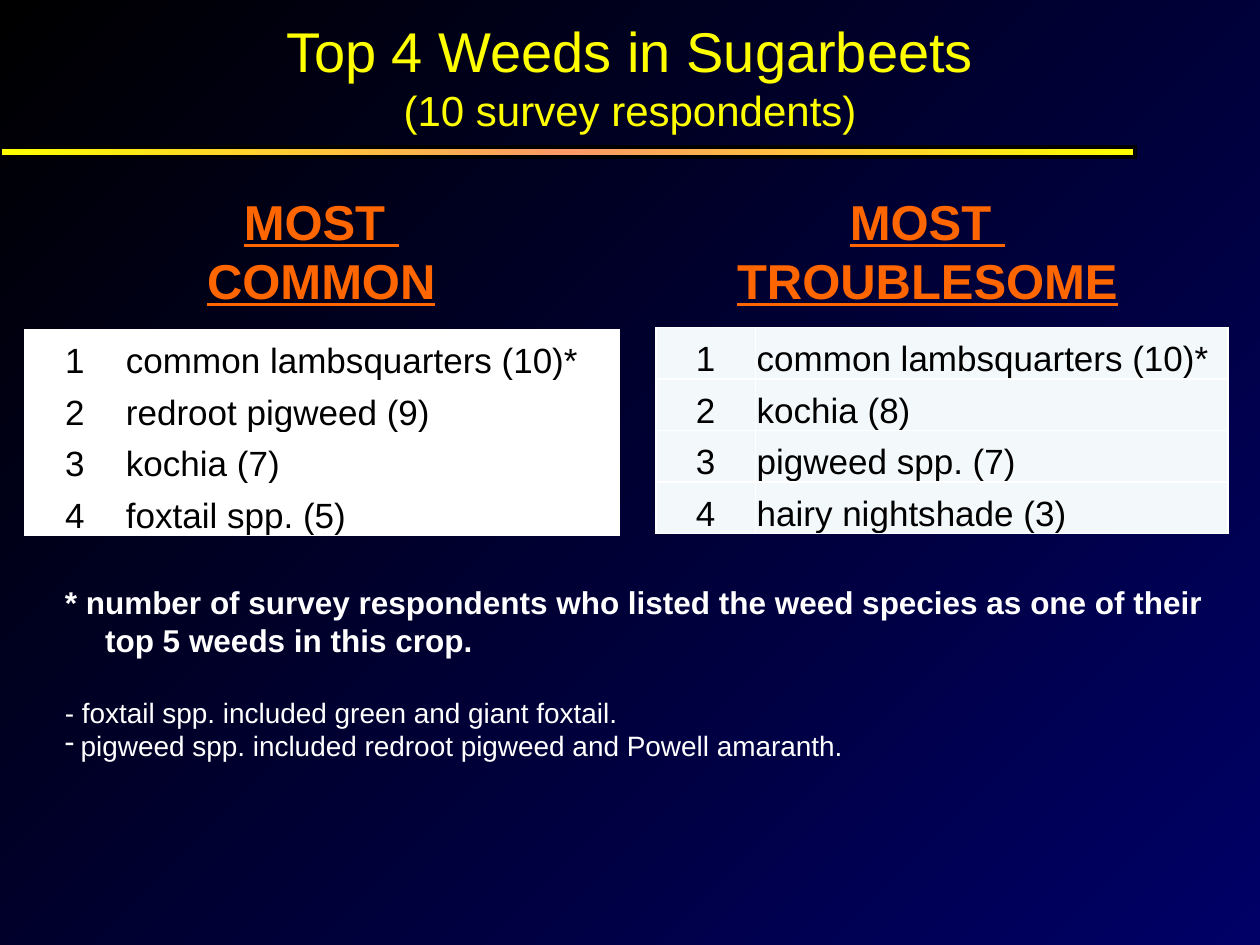
import copy
from dataclasses import dataclass

import pptx
import pptx.dml.color
import pptx.enum.shapes
import pptx.enum.text
import pptx.oxml
import pptx.oxml.ns
import pptx.util

Pt = pptx.util.Pt
RGB = pptx.dml.color.RGBColor.from_string
ALIGN = pptx.enum.text.PP_ALIGN
ANCHOR = pptx.enum.text.MSO_ANCHOR
AUTO_SIZE = pptx.enum.text.MSO_AUTO_SIZE


@dataclass(frozen=True)
class Theme:
    font: str = "Arial"
    black: str = "000000"
    navy: str = "000066"
    yellow: str = "FFFF00"
    peach: str = "FF9966"
    orange: str = "FF6600"
    white: str = "FFFFFF"
    pale: str = "F3F9FA"
    title: int = 32
    heading: int = 28
    subtitle: int = 24
    table: int = 20
    note: int = 18
    detail: int = 16


def set_values(target, values):
    for name, value in values.items():
        setattr(target, name, value)


class SlideBuilder:
    def __init__(self, slide, theme):
        self.slide = slide
        self.theme = theme

    def gradient(self, fill, colors, angle):
        """Spread the colours evenly; the angle runs counter-clockwise."""
        fill.gradient()
        fill.gradient_angle = angle
        first = fill.gradient_stops[0]._gs
        for _ in colors[2:]:
            first.addnext(copy.deepcopy(first))
        for index, (stop, color) in enumerate(zip(fill.gradient_stops, colors)):
            stop.color.rgb = RGB(color)
            stop.position = index / (len(colors) - 1)

    def background(self, colors, angle):
        self.gradient(self.slide.background.fill, colors, angle)

    def rule(self, left, top, width, height, colors):
        shape = self.slide.shapes.add_shape(
            pptx.enum.shapes.MSO_SHAPE.RECTANGLE,
            Pt(left), Pt(top), Pt(width), Pt(height))
        shape.shadow.inherit = False
        self.gradient(shape.fill, colors, 0)
        shape.line.color.rgb = RGB(self.theme.black)
        shape.line.width = Pt(2.25)

    def add_text(self, paragraph, text, color, size, align=ALIGN.LEFT, **font):
        paragraph.alignment = align
        run = paragraph.add_run()
        run.text = text
        set_values(run.font, {"name": self.theme.font, "size": Pt(size), **font})
        run.font.color.rgb = RGB(color)

    def hang(self, paragraph, indent, bullet=None):
        """Set a hanging indent, with an optional bullet character."""
        properties = paragraph._p.get_or_add_pPr()
        properties.set("marL", str(Pt(indent)))
        properties.set("indent", str(-Pt(indent)))
        if bullet:
            element = pptx.oxml.parse_xml(
                f'<a:buChar {pptx.oxml.ns.nsdecls("a")} char="{bullet}"/>')
            properties.append(element)

    def text(self, left, top, width, height, paragraphs, **frame_values):
        """Add a text box; each paragraph is a dict of format values."""
        box = self.slide.shapes.add_textbox(Pt(left), Pt(top), Pt(width), Pt(height))
        frame = box.text_frame
        set_values(frame, {"word_wrap": True, **frame_values})
        for index, values in enumerate(paragraphs):
            values = dict(values)
            paragraph = frame.add_paragraph() if index else frame.paragraphs[0]
            indent, bullet = values.pop("indent", 0), values.pop("bullet", None)
            paragraph.space_before = Pt(values.pop("space_before", 0))
            self.add_text(paragraph, **values)
            if indent:
                self.hang(paragraph, indent, bullet)

    def borders(self, cell):
        properties = cell._tc.get_or_add_tcPr()
        for side in ("lnL", "lnR", "lnT", "lnB"):
            properties.append(pptx.oxml.parse_xml(
                f'<a:{side} {pptx.oxml.ns.nsdecls("a")} w="{Pt(1)}"><a:solidFill>'
                f'<a:srgbClr val="{self.theme.white}"/></a:solidFill></a:{side}>'))

    def ranking(self, left, top, widths, weeds, color):
        """Add a table that numbers the weeds from 1."""
        row_height = 29.4
        table = self.slide.shapes.add_table(
            len(weeds), 2, Pt(left), Pt(top),
            Pt(sum(widths)), Pt(row_height * len(weeds))).table
        for column, width in zip(table.columns, widths):
            column.width = Pt(width)
        for index, weed in enumerate(weeds):
            table.rows[index].height = Pt(row_height)
            entries = ((str(index + 1), ALIGN.CENTER), (weed, ALIGN.LEFT))
            for cell, (text, align) in zip(table.rows[index].cells, entries):
                set_values(cell, {
                    "margin_left": Pt(0.7), "margin_right": Pt(0.7),
                    "margin_top": Pt(0.7), "margin_bottom": Pt(0),
                    "vertical_anchor": ANCHOR.BOTTOM})
                self.borders(cell)
                cell.fill.solid()
                cell.fill.fore_color.rgb = RGB(color)
                self.add_text(cell.text_frame.paragraphs[0], text,
                              self.theme.black, self.theme.table, align)


def main():
    theme = Theme()
    presentation = pptx.Presentation()
    presentation.slide_width, presentation.slide_height = Pt(720), Pt(540)
    slide = presentation.slides.add_slide(presentation.slide_layouts[6])
    builder = SlideBuilder(slide, theme)

    builder.background([theme.black, theme.navy], 315)
    builder.rule(0, 84.2, 648.7, 5.8, [theme.yellow, theme.peach, theme.yellow])

    heading = {"color": theme.orange, "size": theme.heading,
               "align": ALIGN.CENTER, "bold": True, "underline": True}
    for left, width, word, wrap in ((97.2, 172.8, "COMMON", True),
                                    (412.6, 234.7, "TROUBLESOME", False)):
        builder.text(left, 105.8, width, 74.9,
                     [{"text": line, **heading} for line in ("MOST ", word)],
                     word_wrap=wrap, auto_size=AUTO_SIZE.SHAPE_TO_FIT_TEXT)

    builder.ranking(14.4, 188.4, (56.9, 282.8), (
        "common lambsquarters (10)*", "redroot pigweed (9)",
        "kochia (7)", "foxtail spp. (5)"), theme.white)
    builder.ranking(374.8, 187.2, (56.9, 270), (
        "common lambsquarters (10)*", "kochia (8)",
        "pigweed spp. (7)", "hairy nightshade (3)"), theme.pale)

    title = {"color": theme.yellow, "align": ALIGN.CENTER}
    builder.text(24, 0, 672, 86.4, [
        {"text": "Top 4 Weeds in Sugarbeets", "size": theme.title, **title},
        {"text": "(10 survey respondents)", "size": theme.subtitle, **title},
    ], vertical_anchor=ANCHOR.MIDDLE)

    detail = {"color": theme.white, "size": theme.detail, "indent": 9}
    builder.text(30, 329.8, 666, 111.6, [
        {"text": "* number of survey respondents who listed the weed species "
                 "as one of their top 5 weeds in this crop.",
         "color": theme.white, "size": theme.note, "bold": True, "indent": 23},
        {"text": "- foxtail spp. included green and giant foxtail.",
         "space_before": 20.7, **detail},
        {"text": "pigweed spp. included redroot pigweed and Powell amaranth.",
         "bullet": "-", **detail},
    ], auto_size=AUTO_SIZE.SHAPE_TO_FIT_TEXT)

    presentation.save("out.pptx")


if __name__ == "__main__":
    main()
